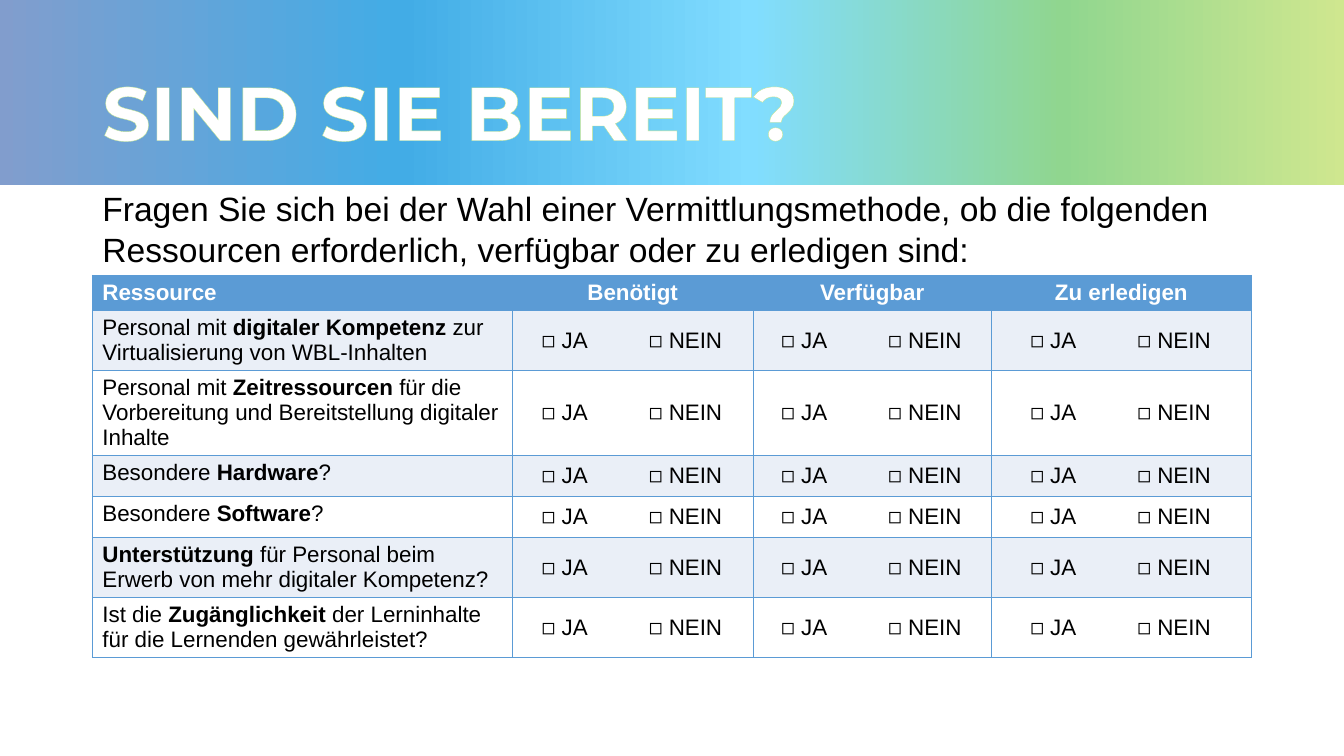
from lxml.etree import SubElement
from pptx import Presentation
from pptx.dml.color import RGBColor
from pptx.enum.shapes import MSO_SHAPE as Shape
from pptx.enum.text import MSO_ANCHOR as Anchor, PP_ALIGN as Align
from pptx.oxml import parse_xml
from pptx.oxml.ns import nsdecls, qn
from pptx.util import Pt

COLORS = {"white": "FFFFFF", "black": "000000", "blue": "5B9BD5",
          "band": "EAEFF7", "outline": "BFE38F"}
BANNER_STOPS = [(0, "819DCD"), (30, "42ACE6"), (56, "81DDFF"),
                (79, "90D68F"), (100, "CFE78F")]

LEFT = 66
COLUMN_WIDTHS = [300, 172, 170, 186]
HEADER_HEIGHT, ROW_HEIGHT = 17, 29.5
CHOICE_WIDTH, CHOICE_TAB = 130, 76.5

HEADERS = ["Ressource", "Benötigt", "Verfügbar", "Zu erledigen"]
# Each resource: text before, bold text, text after
RESOURCES = [
    ("Personal mit ", "digitaler Kompetenz ", "zur Virtualisierung von WBL-Inhalten"),
    ("Personal mit ", "Zeitressourcen",
     " für die Vorbereitung und Bereitstellung digitaler Inhalte"),
    ("Besondere ", "Hardware", "?"),
    ("Besondere ", "Software", "?"),
    ("", "Unterstützung ", "für Personal beim Erwerb von mehr digitaler Kompetenz?"),
    ("Ist die ", "Zugänglichkeit", " der Lerninhalte für die Lernenden gewährleistet?"),
]
INTRO = ("Fragen Sie sich bei der Wahl einer Vermittlungsmethode, ob die folgenden "
         "Ressourcen erforderlich, verfügbar oder zu erledigen sind:")


def rgb(name):
    return RGBColor.from_string(COLORS[name])


def add_run(paragraph, text, size, color="black", bold=False, font="Arial"):
    run = paragraph.add_run()
    run.text = text
    run.font.size, run.font.bold, run.font.name = Pt(size), bold, font
    run.font.color.rgb = rgb(color)
    return run


def add_banner(slide):
    banner = slide.shapes.add_shape(Shape.RECTANGLE, 0, Pt(-6), Pt(960), Pt(138.5))
    banner.shadow.inherit = False
    banner.line.fill.background()
    stops = "".join(f'<a:gs pos="{position * 1000}"><a:srgbClr val="{color}"/></a:gs>'
                    for position, color in BANNER_STOPS)
    gradient = parse_xml(f'<a:gradFill {nsdecls("a")}><a:gsLst>{stops}</a:gsLst>'
                         '<a:lin ang="0" scaled="0"/></a:gradFill>')
    banner.element.spPr.find(qn("a:prstGeom")).addnext(gradient)
    # Send the banner behind the title
    slide.shapes.title.element.addprevious(banner.element)


def format_title(slide, text):
    title = slide.shapes.title
    title.left, title.top, title.width, title.height = Pt(LEFT), Pt(23), Pt(828), Pt(120)
    title.text_frame.vertical_anchor = Anchor.MIDDLE
    paragraph = title.text_frame.paragraphs[0]
    paragraph.alignment, paragraph.line_spacing = Align.LEFT, 0.9
    run = add_run(paragraph, text, 54, "white", True, "Montserrat")
    run.font._element.insert(0, parse_xml(
        f'<a:ln {nsdecls("a")} w="{Pt(0.75)}"><a:solidFill>'
        f'<a:srgbClr val="{COLORS["outline"]}"/></a:solidFill></a:ln>'))


def style_cell(cell, fill):
    properties = cell._tc.get_or_add_tcPr()
    for side in ("a:lnL", "a:lnR", "a:lnT", "a:lnB"):
        line = SubElement(properties, qn(side), w=str(Pt(1)))
        solid = SubElement(line, qn("a:solidFill"))
        SubElement(solid, qn("a:srgbClr"), val=COLORS["blue"])
    cell.fill.solid()
    cell.fill.fore_color.rgb = rgb(fill)


def fill_choice(cell, column_width):
    """Centre the pair of choices in its column, spaced by a tab stop."""
    cell.vertical_anchor = Anchor.MIDDLE
    cell.margin_left = Pt((column_width - CHOICE_WIDTH) / 2)
    cell.margin_right = 0
    paragraph = cell.text_frame.paragraphs[0]
    tabs = SubElement(paragraph._p.get_or_add_pPr(), qn("a:tabLst"))
    SubElement(tabs, qn("a:tab"), pos=str(Pt(CHOICE_TAB)), algn="l")
    add_run(paragraph, "◻ JA\t◻ NEIN", 16)


def add_checklist(slide):
    row_count = len(RESOURCES) + 1
    height = HEADER_HEIGHT + ROW_HEIGHT * len(RESOURCES)
    table = slide.shapes.add_table(row_count, len(HEADERS), Pt(LEFT), Pt(196.8),
                                   Pt(sum(COLUMN_WIDTHS)), Pt(height)).table
    for column, width in zip(table.columns, COLUMN_WIDTHS):
        column.width = Pt(width)
    for index, row in enumerate(table.rows):
        row.height = Pt(ROW_HEIGHT if index else HEADER_HEIGHT)

    # Header row
    for index, header in enumerate(HEADERS):
        cell = table.cell(0, index)
        style_cell(cell, "blue")
        paragraph = cell.text_frame.paragraphs[0]
        paragraph.alignment = Align.CENTER if index else Align.LEFT
        add_run(paragraph, header, 16, "white", True)

    # Resource rows
    for row, parts in enumerate(RESOURCES, start=1):
        for column, width in enumerate(COLUMN_WIDTHS):
            cell = table.cell(row, column)
            style_cell(cell, "band" if row % 2 else "white")
            if column:
                fill_choice(cell, width)
                continue
            for part, text in enumerate(parts):
                if text:
                    add_run(cell.text_frame.paragraphs[0], text, 16, bold=part == 1)


def add_intro(slide):
    box = slide.shapes.add_textbox(Pt(LEFT), Pt(131), Pt(840), Pt(343))
    box.text_frame.word_wrap = True
    add_run(box.text_frame.paragraphs[0], INTRO, 24)


def main():
    presentation = Presentation()
    presentation.slide_width, presentation.slide_height = Pt(960), Pt(540)
    slide = presentation.slides.add_slide(presentation.slide_layouts[5])
    format_title(slide, "SIND SIE BEREIT?")
    add_banner(slide)
    add_checklist(slide)
    add_intro(slide)
    presentation.save("out.pptx")


if __name__ == "__main__":
    main()
